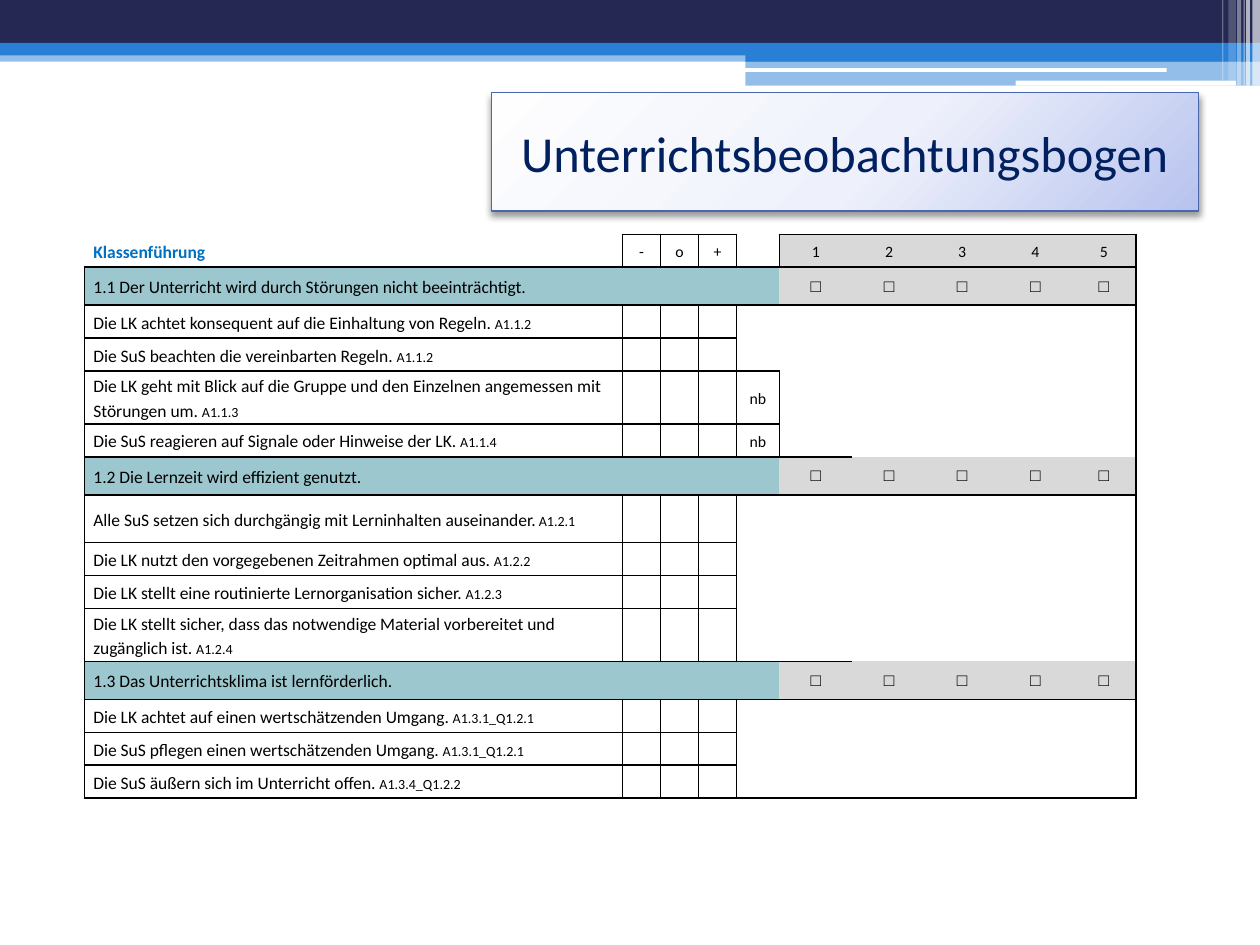
from dataclasses import dataclass

from lxml import etree
from pptx import Presentation
from pptx.dml.color import RGBColor
from pptx.enum import shapes, text
from pptx.oxml import ns
from pptx.util import Pt

COLORS = {
    "navy": "242852", "blue": "297FD5", "white": "FFFFFF", "black": "000000",
    "title": "002060", "title_line": "4A66AC", "heading": "0070C0",
    "section": "9CC7CE", "rating": "D9D9D9",
}
FONT, BOX_FONT = "Calibri", "Courier New"
RATING_COLUMN, SCALE = 5, 5
COLUMN_WIDTHS = [307.4] + [21.7] * 3 + [24.5] + [41.8] * 4 + [36.7]
NORMAL, SECTION, TALL, DOUBLE = 18.8, 21.7, 27.4, 30.3


@dataclass
class Band:
    left: float
    top: float
    width: float
    height: float
    color: str
    opacity: int = 100
    kind: shapes.MSO_SHAPE = shapes.MSO_SHAPE.RECTANGLE


@dataclass
class Item:
    statement: str
    code: str
    height: float = NORMAL
    nb: bool = False


@dataclass
class Section:
    title: str
    items: list[Item]


ROUNDED = shapes.MSO_SHAPE.ROUNDED_RECTANGLE
BANDS = [
    Band(0, 28.8, 720, 6.5, "blue", 50),
    Band(0, 0, 720, 24.5, "navy"),
    Band(0, 24.5, 720, 7.2, "blue"),
    Band(426, 28.1, 294, 7.2, "blue"),
    Band(426, 34.6, 294, 14.4, "blue", 50),
    Band(425.5, 38.9, 241.2, 2.2, "white", kind=ROUNDED),
    Band(580.3, 46.1, 126, 2.9, "white", kind=ROUNDED),
    # Vertical stripes in the corner
    Band(715.7, 0, 4.3, 49, "white", 65),
    Band(712.1, 0, 2.2, 49, "white", 65),
    Band(710.6, 0, 0.7, 49, "white", 60),
    Band(707, 0, 2.2, 49, "white", 40),
    Band(702, 0, 4.3, 46.1, "white", 20),
    Band(698.4, 0, 0.7, 46.1, "white", 30),
]
SECTIONS = [
    Section("1.1 Der Unterricht wird durch Störungen nicht beeinträchtigt.", [
        Item("Die LK achtet konsequent auf die Einhaltung von Regeln. ", "A1.1.2"),
        Item("Die SuS beachten die vereinbarten Regeln. ", "A1.1.2"),
        Item("Die LK geht mit Blick auf die Gruppe und den Einzelnen angemessen mit "
             "Störungen um. ", "A1.1.3", DOUBLE, nb=True),
        Item("Die SuS reagieren auf Signale oder Hinweise der LK. ", "A1.1.4", nb=True),
    ]),
    Section("1.2 Die Lernzeit wird effizient genutzt.", [
        Item("Alle SuS setzen sich durchgängig mit Lerninhalten auseinander.", " A1.2.1", TALL),
        Item("Die LK nutzt den vorgegebenen Zeitrahmen optimal aus. ", "A1.2.2"),
        Item("Die LK stellt eine routinierte Lernorganisation sicher. ", "A1.2.3"),
        Item("Die LK stellt sicher, dass das notwendige Material vorbereitet und "
             "zugänglich ist. ", "A1.2.4", DOUBLE),
    ]),
    Section("1.3 Das Unterrichtsklima ist lernförderlich.", [
        Item("Die LK achtet auf einen wertschätzenden Umgang. ", "A1.3.1_Q1.2.1"),
        Item("Die SuS pflegen einen wertschätzenden Umgang. ", "A1.3.1_Q1.2.1"),
        Item("Die SuS äußern sich im Unterricht offen. ", "A1.3.4_Q1.2.2"),
    ]),
]


def rgb(name: str) -> RGBColor:
    return RGBColor.from_string(COLORS[name])


def add_xml(parent, tag: str, **attributes):
    return etree.SubElement(parent, ns.qn(tag), **attributes)


def add_band(slide, band: Band) -> None:
    bar = slide.shapes.add_shape(
        band.kind, Pt(band.left), Pt(band.top), Pt(band.width), Pt(band.height))
    bar.shadow.inherit = False
    bar.line.fill.background()
    bar.fill.solid()
    bar.fill.fore_color.rgb = rgb(band.color)
    if band.opacity < 100:
        tint = bar.fill._xPr.find(".//" + ns.qn("a:srgbClr"))
        add_xml(tint, "a:alpha", val=str(band.opacity * 1000))


def add_title(slide, wording: str) -> None:
    title = slide.shapes.add_shape(
        shapes.MSO_SHAPE.RECTANGLE, Pt(280.8), Pt(53), Pt(404), Pt(67.7))
    title.line.color.rgb = rgb("title_line")
    title.line.width = Pt(0.75)
    title.shadow.inherit = False
    # Soft shadow below
    effects = title._element.spPr.find(ns.qn("a:effectLst"))
    shadow = add_xml(effects, "a:outerShdw", blurRad=str(Pt(4.1)), dist=str(Pt(2)),
                     dir="5400000", rotWithShape="0")
    add_xml(add_xml(shadow, "a:srgbClr", val=COLORS["black"]), "a:alpha", val="40000")
    # Circular gradient centred beyond the upper left corner
    title.fill.gradient()
    gradient = title._element.spPr.find(ns.qn("a:gradFill"))
    for part in list(gradient):
        gradient.remove(part)
    stops = add_xml(gradient, "a:gsLst")
    for position, color in ((0, "FEFEFF"), (55, "EEF1FB"), (100, "B8C3EF")):
        add_xml(add_xml(stops, "a:gs", pos=str(position * 1000)), "a:srgbClr", val=color)
    add_xml(add_xml(gradient, "a:path", path="circle"), "a:fillToRect",
            l="-40000", t="-90000", r="140000", b="190000")

    title.text_frame.word_wrap = True
    title.text_frame.vertical_anchor = text.MSO_ANCHOR.MIDDLE
    paragraph = title.text_frame.paragraphs[0]
    paragraph.text = wording
    paragraph.alignment = text.PP_ALIGN.CENTER
    paragraph.font.name, paragraph.font.size = FONT, Pt(28.8)
    paragraph.font.color.rgb = rgb("title")


def format_cell(cell, sides: str, fill: str | None = None) -> None:
    """Fill the cell and rule the sides named by the letters l, r, t and b."""
    cell.margin_left = cell.margin_right = Pt(5)
    cell.margin_top = cell.margin_bottom = 0
    cell.vertical_anchor = text.MSO_ANCHOR.MIDDLE
    if fill:
        cell.fill.solid()
        cell.fill.fore_color.rgb = rgb(fill)
    else:
        cell.fill.background()
    properties = cell._tc.get_or_add_tcPr()
    for index, side in enumerate("lrtb"):
        border = etree.Element(ns.qn("a:ln" + side.upper()), w=str(Pt(1)))
        if side in sides:
            add_xml(add_xml(border, "a:solidFill"), "a:srgbClr", val=COLORS["black"])
        else:
            add_xml(border, "a:noFill")
        properties.insert(index, border)


def write(cell, *pieces: tuple[str, float], centred: bool = False, color: str = "black",
          bold: bool = False, font: str = FONT) -> None:
    paragraph = cell.text_frame.paragraphs[0]
    paragraph.line_spacing = 1.15
    paragraph.alignment = text.PP_ALIGN.CENTER if centred else text.PP_ALIGN.LEFT
    paragraph.font.name, paragraph.font.bold = font, bold
    paragraph.font.color.rgb = rgb(color)
    for wording, size in pieces:
        run = paragraph.add_run()
        run.text, run.font.size = wording, Pt(size)
    if not pieces:
        add_xml(paragraph._p, "a:endParaRPr", sz="900")


def fill_header(table) -> None:
    format_cell(table.cell(0, 0), "rb")
    write(table.cell(0, 0), ("Klassenführung", 10), color="heading", bold=True)
    for column, mark in enumerate("-o+", 1):
        format_cell(table.cell(0, column), "lrtb")
        write(table.cell(0, column), (mark, 9), centred=True)
    format_cell(table.cell(0, 4), "lrb")
    write(table.cell(0, 4))
    for grade in range(1, SCALE + 1):
        cell = table.cell(0, RATING_COLUMN + grade - 1)
        format_cell(cell, "tb" + "l" * (grade == 1) + "r" * (grade == SCALE), "rating")
        write(cell, (str(grade), 9), centred=True)


def fill_section(table, row: int, section: Section) -> None:
    heading = table.cell(row, 0)
    heading.merge(table.cell(row, RATING_COLUMN - 1))
    format_cell(heading, "ltb", "section")
    write(heading, (section.title, 10))
    for step in range(SCALE):
        cell = table.cell(row, RATING_COLUMN + step)
        ruled_top = row == 1 or step == 0
        format_cell(cell, "b" + "t" * ruled_top + "r" * (step == SCALE - 1), "rating")
        write(cell, ("□", 10), centred=True, font=BOX_FONT)


def fill_item(table, row: int, item: Item, first: bool, last: bool) -> None:
    edges = "t" * first + "b" * last
    for column in range(4):
        format_cell(table.cell(row, column), "lrtb")
        write(table.cell(row, column),
              *([(item.statement, 10), (item.code, 8)] if column == 0 else []))
    not_observed = table.cell(row, 4)
    format_cell(not_observed, "lrtb" if item.nb else "l" + edges)
    write(not_observed, *([("nb", 9)] if item.nb else []), centred=True)
    remainder = table.cell(row, RATING_COLUMN)
    remainder.merge(table.cell(row, RATING_COLUMN + SCALE - 1))
    format_cell(remainder, "r" + edges + "l" * item.nb)
    write(remainder)


def add_observation_table(slide) -> None:
    heights = [NORMAL]
    for section in SECTIONS:
        heights += [SECTION] + [item.height for item in section.items]
    frame = slide.shapes.add_table(len(heights), len(COLUMN_WIDTHS), Pt(48.4), Pt(133.9),
                                   Pt(sum(COLUMN_WIDTHS)), Pt(sum(heights)))
    table = frame.table
    table.first_row = table.horz_banding = False
    for column, width in zip(table.columns, COLUMN_WIDTHS):
        column.width = Pt(width)
    for line, height in zip(table.rows, heights):
        line.height = Pt(height)
    fill_header(table)
    row = 1
    for section in SECTIONS:
        fill_section(table, row, section)
        for number, item in enumerate(section.items, 1):
            fill_item(table, row + number, item, number == 1, number == len(section.items))
        row += len(section.items) + 1


def main() -> None:
    deck = Presentation()
    deck.slide_width, deck.slide_height = Pt(720), Pt(540)
    slide = deck.slides.add_slide(deck.slide_layouts[6])
    for band in BANDS:
        add_band(slide, band)
    add_title(slide, "Unterrichtsbeobachtungsbogen")
    add_observation_table(slide)
    deck.save("out.pptx")


if __name__ == "__main__":
    main()
